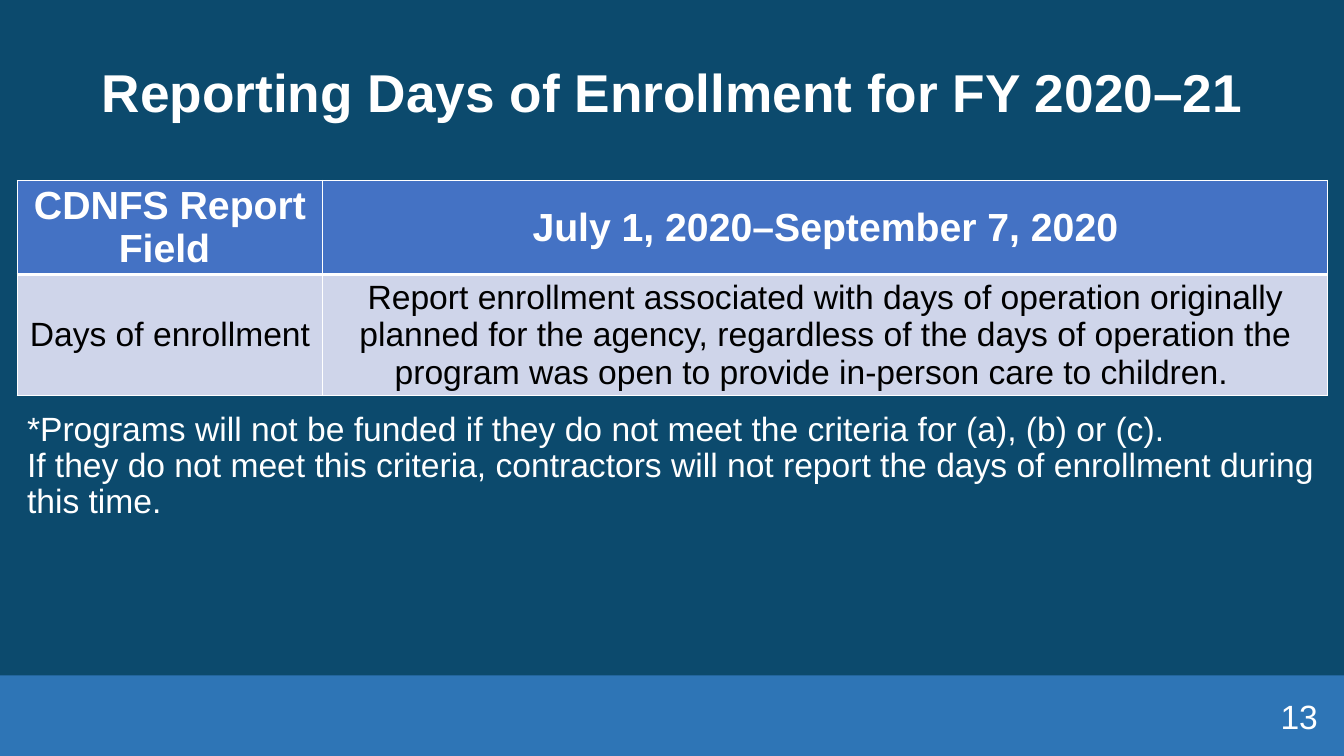
from lxml import etree
from pptx import Presentation
from pptx.dml.color import RGBColor
from pptx.enum import shapes, text
from pptx.oxml.ns import qn
from pptx.util import Inches, Pt

WHITE = "FFFFFF"
LEFT, WIDTH = 0.17, 13
CENTER, RIGHT = text.PP_ALIGN.CENTER, text.PP_ALIGN.RIGHT
MIDDLE, TOP = text.MSO_ANCHOR.MIDDLE, text.MSO_ANCHOR.TOP


def paint(fill, color):
    fill.solid()
    fill.fore_color.rgb = RGBColor.from_string(color)


def write(frame, words, size, color=WHITE, bold=False, align=text.PP_ALIGN.LEFT, spacing=None):
    """Fill the first paragraph of a text frame and set its format."""
    frame.word_wrap = True
    paragraph = frame.paragraphs[0]
    paragraph.text = words
    paragraph.alignment = align
    paragraph.line_spacing = spacing
    font = paragraph.font
    font.name, font.size, font.bold = "Arial", Pt(size), bold
    font.color.rgb = RGBColor.from_string(color)


presentation = Presentation()
presentation.slide_width, presentation.slide_height = Inches(13.33), Inches(7.5)
slide = presentation.slides.add_slide(presentation.slide_layouts[6])
paint(slide.background.fill, "0C4A6D")

footer = slide.shapes.add_shape(
    shapes.MSO_SHAPE.RECTANGLE, 0, Inches(6.7), presentation.slide_width, Inches(0.8))
footer.shadow.inherit = False
paint(footer.fill, "2E75B6")
footer.line.fill.background()

# Title, note and slide number: left, top, width, height, anchor, words, format
boxes = [
    (LEFT, 0.22, WIDTH, 1.45, MIDDLE, "Reporting Days of Enrollment for FY 2020–21",
     dict(size=38, bold=True, align=CENTER, spacing=0.9)),
    (LEFT, 4.04, WIDTH, 1.33, TOP,
     "*Programs will not be funded if they do not meet the criteria for (a), (b) or (c). \n"
     "If they do not meet this criteria, contractors will not report the days of enrollment "
     "during this time.  ",
     dict(size=24, spacing=0.9)),
    (10.17, 6.9, 3, 0.4, MIDDLE, "13", dict(size=24, align=RIGHT)),
]
for left, top, width, height, anchor, words, style in boxes:
    box = slide.shapes.add_textbox(Inches(left), Inches(top), Inches(width), Inches(height))
    box.text_frame.vertical_anchor = anchor
    write(box.text_frame, words, **style)

rows = [
    (0.86, "4472C4", dict(size=28, bold=True),
     ["CDNFS Report Field ", "July 1, 2020–September 7, 2020"]),
    (1.11, "CFD5EA", dict(size=24, color="000000"),
     ["Days of enrollment",
      "Report enrollment associated with days of operation originally planned for the agency, "
      "regardless of the days of operation the program was open to provide in-person care "
      "to children.   "]),
]
table = slide.shapes.add_table(
    2, 2, Inches(LEFT), Inches(1.79), Inches(WIDTH), Inches(1.97)).table
for column, width in zip(table.columns, (3.03, 9.97)):
    column.width = Inches(width)

for row_index, (height, fill, style, entries) in enumerate(rows):
    table.rows[row_index].height = Inches(height)
    # The rule between header and body is thicker than the others
    border_widths = dict(lnL=1, lnR=1, lnT=3 if row_index else 1, lnB=1 if row_index else 3)
    for column_index, words in enumerate(entries):
        cell = table.cell(row_index, column_index)
        cell.margin_left = cell.margin_right = cell.margin_top = cell.margin_bottom = 0
        cell.vertical_anchor = MIDDLE
        write(cell.text_frame, words, align=CENTER, **style)
        properties = cell._tc.get_or_add_tcPr()
        for edge, points in border_widths.items():
            line = etree.SubElement(properties, qn(f"a:{edge}"), w=str(Pt(points)))
            solid = etree.SubElement(line, qn("a:solidFill"))
            etree.SubElement(solid, qn("a:srgbClr"), val=WHITE)
        paint(cell.fill, fill)

presentation.save("out.pptx")
